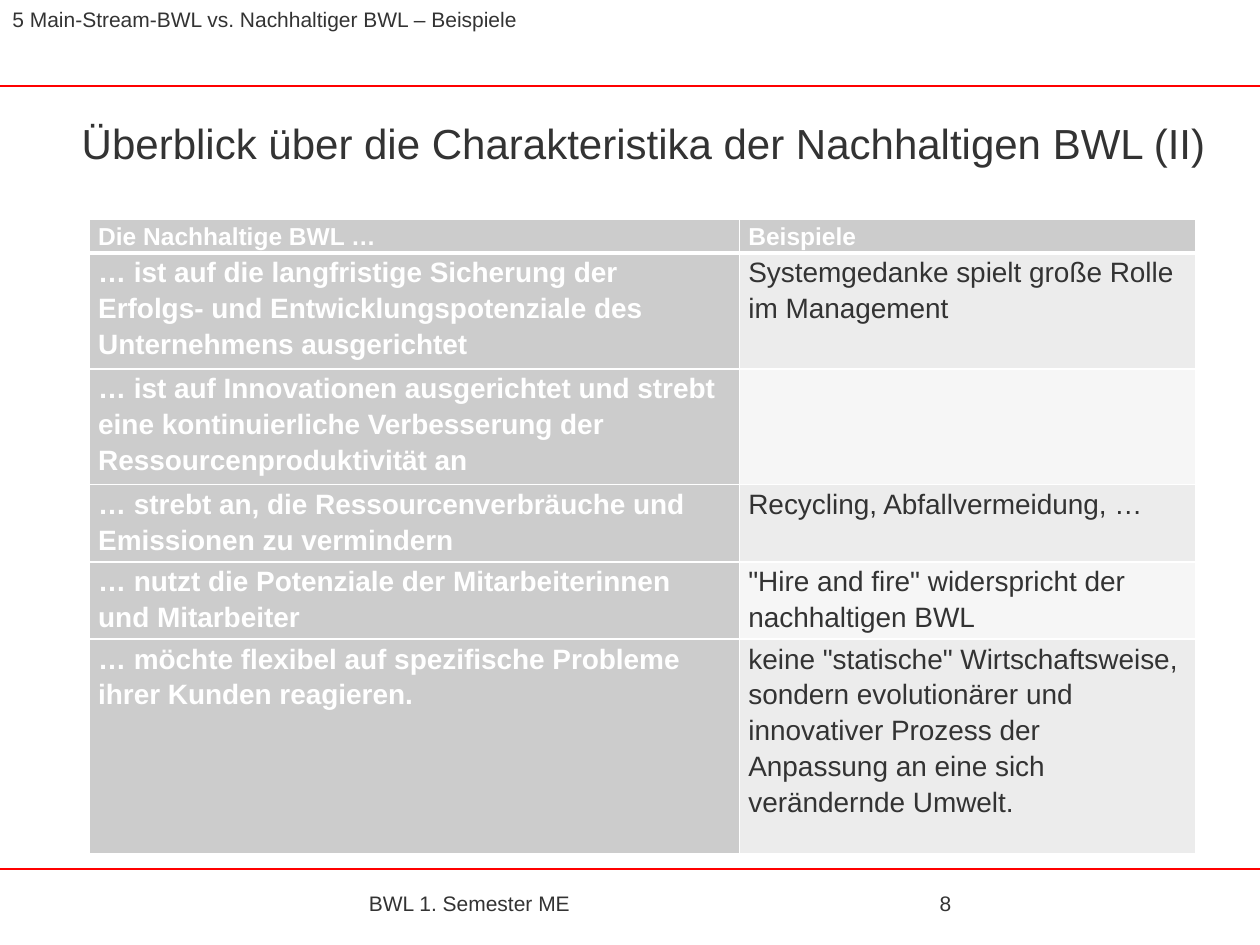
from dataclasses import dataclass

from lxml import etree
from pptx import Presentation
from pptx.dml.color import RGBColor
from pptx.enum import shapes, text
from pptx.oxml import ns
from pptx.util import Inches, Pt


@dataclass(frozen=True)
class Theme:
    font: str = "Arial"
    ink: str = "333333"
    white: str = "FFFFFF"
    red: str = "FF0000"
    grey: str = "CCCCCC"
    bands: tuple = ("ECECEC", "F6F6F6")
    title: int = 24
    body: int = 16
    head: int = 14
    small: int = 12


look = Theme()


def write(frame, words, size=look.small, color=look.ink, bold=False,
          space=1.0, anchor=text.MSO_ANCHOR.TOP):
    frame.word_wrap = True
    frame.vertical_anchor = anchor
    par = frame.paragraphs[0]
    par.alignment = text.PP_ALIGN.LEFT
    par.line_spacing = space
    run = par.add_run()
    run.text = words
    run.font.name = look.font
    run.font.size = Pt(size)
    run.font.bold = bold
    run.font.color.rgb = RGBColor.from_string(color)


def edge(cell, thick):
    """Draw white borders on all sides; thick is the width in points below."""
    props = cell._tc.get_or_add_tcPr()
    widths = {"lnL": 1, "lnR": 1, "lnT": 1, "lnB": thick}
    for spot, (tag, width) in enumerate(widths.items()):
        line = etree.Element(ns.qn("a:" + tag), w=str(Pt(width)))
        fill = etree.SubElement(line, ns.qn("a:solidFill"))
        etree.SubElement(fill, ns.qn("a:srgbClr"), val=look.white)
        props.insert(spot, line)


deck = Presentation()
deck.slide_width, deck.slide_height = Inches(10), Inches(7.5)
slide = deck.slides.add_slide(deck.slide_layouts[6])

# Rules above and below the content
for y in (0.68, 6.9):
    rule = slide.shapes.add_connector(
        shapes.MSO_CONNECTOR.STRAIGHT, 0, Inches(y), Inches(10), Inches(y))
    rule.line.color.rgb = RGBColor.from_string(look.red)
    rule.line.width = Pt(1.1)
    etree.SubElement(rule._element.spPr, ns.qn("a:effectLst"))

# Title, header and footer
mid, low = text.MSO_ANCHOR.MIDDLE, text.MSO_ANCHOR.BOTTOM
labels = [
    ((0.55, 0.71, 9.29, 0.67),
     "Überblick über die Charakteristika der Nachhaltigen BWL (II)",
     {"size": look.title, "anchor": low}),
    ((2.83, 7, 4.33, 0.33), "BWL 1. Semester ME", {"anchor": mid}),
    ((7.36, 7, 2.08, 0.33), "8", {"anchor": mid}),
    ((0, 0, 10.22, 0.34),
     "5 Main-Stream-BWL vs. Nachhaltiger BWL – Beispiele", {}),
]
for place, words, style in labels:
    box = slide.shapes.add_textbox(*map(Inches, place))
    write(box.text_frame, words, **style)

# Table: trait and example; the text sets the row heights
rows = [
    ("Die Nachhaltige BWL …", "Beispiele"),
    ("… ist auf die langfristige Sicherung der Erfolgs- und "
     "Entwicklungspotenziale des Unternehmens ausgerichtet",
     "Systemgedanke spielt große Rolle im Management"),
    ("… ist auf Innovationen ausgerichtet und strebt eine "
     "kontinuierliche Verbesserung der Ressourcenproduktivität an", ""),
    ("… strebt an, die Ressourcenverbräuche und Emissionen zu vermindern",
     "Recycling, Abfallvermeidung, …"),
    ("… nutzt die Potenziale der Mitarbeiterinnen und Mitarbeiter",
     '"Hire and fire" widerspricht der nachhaltigen BWL'),
    ("… möchte flexibel auf spezifische Probleme ihrer Kunden reagieren.",
     'keine "statische" Wirtschaftsweise, sondern evolutionärer und '
     "innovativer Prozess der Anpassung an eine sich verändernde Umwelt."),
]
widths = (5.16, 3.62)
table = slide.shapes.add_table(
    len(rows), len(widths), Inches(0.71), Inches(1.74),
    Inches(sum(widths)), Inches(5.04)).table
for col, width in zip(table.columns, widths):
    col.width = Inches(width)
for r, cells in enumerate(rows):
    last = r == len(rows) - 1
    table.rows[r].height = Inches(1.7 if last else 0)
    for c, words in enumerate(cells):
        cell = table.cell(r, c)
        strong = r == 0 or c == 0
        cell.margin_left, cell.margin_right = Inches(0.07), Inches(0.1)
        cell.margin_top = cell.margin_bottom = 0
        cell.fill.solid()
        cell.fill.fore_color.rgb = RGBColor.from_string(
            look.grey if strong else look.bands[(r - 1) % 2])
        edge(cell, 1 if r else 3)
        if words:
            write(cell.text_frame, words, bold=strong, space=1.15,
                  size=look.body if r else look.head,
                  color=look.white if strong else look.ink)

deck.save("out.pptx")
